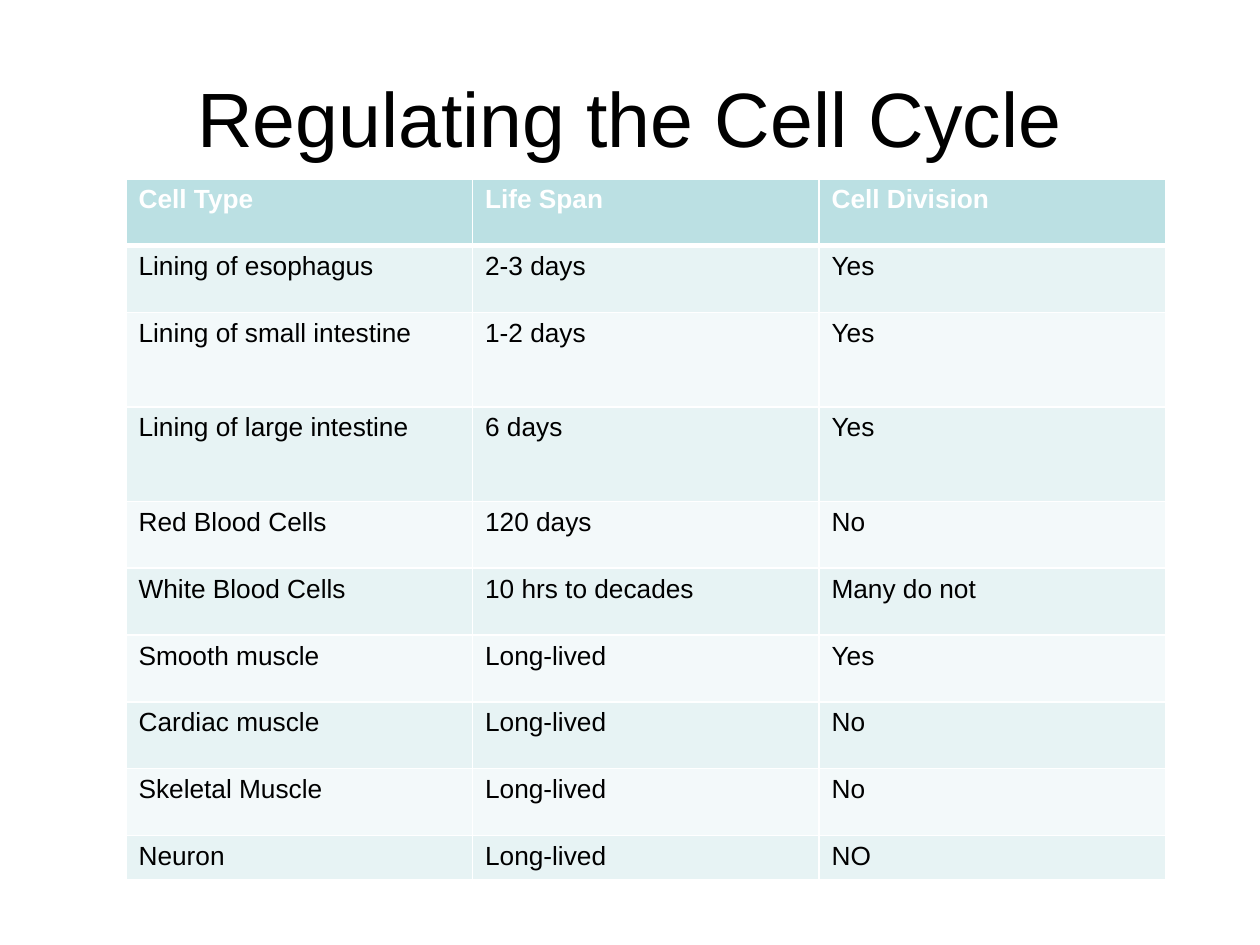
from lxml.etree import SubElement as Sub
from pptx import Presentation
from pptx.dml.color import RGBColor as RGB
from pptx.enum.text import MSO_ANCHOR as Anchor, PP_ALIGN as Align
from pptx.oxml.ns import qn
from pptx.util import Emu, Pt

# Content: each row is its height in px and its cells
TITLE = "Regulating the Cell Cycle"
ROWS = [
    (53, "Cell Type", "Life Span", "Cell Division"),
    (53, "Lining of esophagus", "2-3 days", "Yes"),
    (75, "Lining of small intestine", "1-2 days", "Yes"),
    (75, "Lining of large intestine", "6 days", "Yes"),
    (53, "Red Blood Cells", "120 days", "No"),
    (53, "White Blood Cells", "10 hrs to decades", "Many do not"),
    (53, "Smooth muscle", "Long-lived", "Yes"),
    (53, "Cardiac muscle", "Long-lived", "No"),
    (53, "Skeletal Muscle", "Long-lived", "No"),
    (35, "Neuron", "Long-lived", "NO"),
]
COLS = [275, 275, 275]
HEAD, BANDS = "BBE0E3", ("F3F9FA", "E7F3F4")
WHITE, BLACK = "FFFFFF", "000000"


def px(n):
    return Emu(n * 9144)  # 100 px to the inch


def color(code):
    return RGB.from_string(code)


def style(frame, size, code, bold=False):
    for run in frame.paragraphs[0].runs:
        font = run.font
        font.name, font.size, font.bold = "Arial", Pt(size), bold
        font.color.rgb = color(code)


def border(cell, side, width):
    line = Sub(cell._tc.get_or_add_tcPr(), qn("a:ln" + side), w=str(Pt(width)))
    Sub(Sub(line, qn("a:solidFill")), qn("a:srgbClr"), val=WHITE)


deck = Presentation()
deck.slide_width, deck.slide_height = px(1000), px(750)
slide = deck.slides.add_slide(deck.slide_layouts[6])

# Title
frame = slide.shapes.add_textbox(px(50), px(30), px(900), px(125)).text_frame
frame.word_wrap = True
frame.vertical_anchor = Anchor.MIDDLE
frame.text = TITLE
frame.paragraphs[0].alignment = Align.CENTER
style(frame, 44, BLACK)

# Table
high = sum(row[0] for row in ROWS)
table = slide.shapes.add_table(
    len(ROWS), len(COLS), px(100), px(142), px(sum(COLS)), px(high)).table
for col, wide in zip(table.columns, COLS):
    col.width = px(wide)

for i, (tall, *texts) in enumerate(ROWS):
    table.rows[i].height = px(tall)
    top = i == 0
    for j, text in enumerate(texts):
        cell = table.cell(i, j)
        # The rule under the header is thicker than the rest
        widths = {"L": 1, "R": 1, "T": 3 if i == 1 else 1, "B": 3 if top else 1}
        for side, width in widths.items():
            border(cell, side, width)
        cell.fill.solid()
        cell.fill.fore_color.rgb = color(HEAD if top else BANDS[i % 2])
        cell.text_frame.text = text
        style(cell.text_frame, 15, WHITE if top else BLACK, top)

deck.save("out.pptx")
